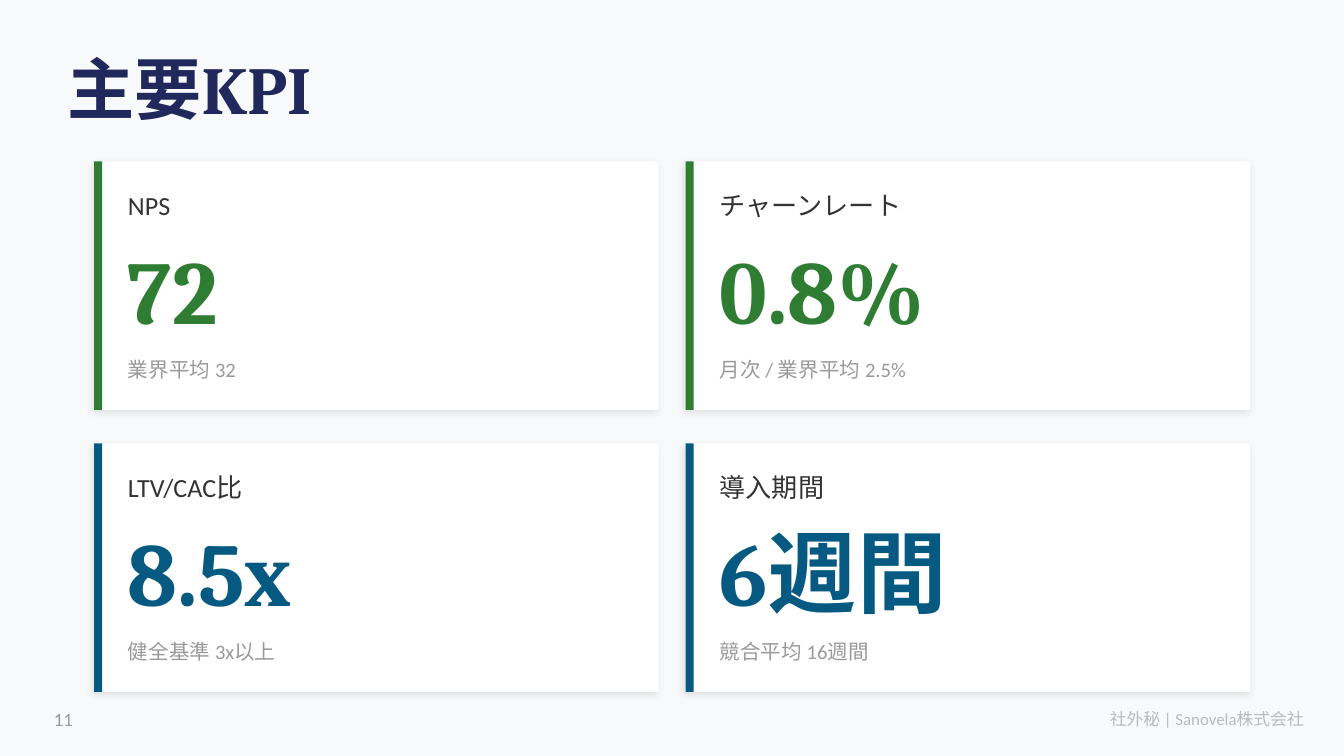
from lxml import etree
from pptx import Presentation
from pptx import util as u
from pptx.dml.color import RGBColor
from pptx.enum import shapes, text
from pptx.oxml.ns import qn

COLORS = {
    "background": "F8F9FA",
    "card": "FFFFFF",
    "shadow": "000000",
    "title": "21295C",
    "green": "2E7D32",
    "blue": "065A82",
    "label": "333333",
    "note": "999999",
    "footer": "BBBBBB",
}

KPIS = [
    ("NPS", "72", "業界平均 32", "green"),
    ("チャーンレート", "0.8%", "月次 / 業界平均 2.5%", "green"),
    ("LTV/CAC比", "8.5x", "健全基準 3x以上", "blue"),
    ("導入期間", "6週間", "競合平均 16週間", "blue"),
]

COLUMNS = 2
GRID_LEFT, GRID_TOP = 1.78, 3.05
CARD_WIDTH, CARD_HEIGHT = 10.67, 4.7
COLUMN_PITCH, ROW_PITCH = 11.18, 5.33
ACCENT_WIDTH = 0.15
TEXT_INSET, TEXT_WIDTH = 0.64, 9.65


def color(name):
    return RGBColor.from_string(COLORS[name])


def write(shape, content, size, font, color_name, bold=False, align=text.PP_ALIGN.LEFT):
    frame = shape.text_frame
    frame.word_wrap = True
    frame.auto_size = text.MSO_AUTO_SIZE.NONE
    frame.vertical_anchor = text.MSO_ANCHOR.MIDDLE
    frame.margin_left = frame.margin_right = frame.margin_top = frame.margin_bottom = 0
    paragraph = frame.paragraphs[0]
    paragraph.alignment = align
    run = paragraph.add_run()
    run.text = content
    run.font.size = u.Pt(size)
    run.font.name = font
    run.font.bold = bold
    run.font.color.rgb = color(color_name)


def add_text(slide, left, top, width, height, *content, **style):
    box = slide.shapes.add_textbox(u.Cm(left), u.Cm(top), u.Cm(width), u.Cm(height))
    write(box, *content, **style)


def add_rectangle(slide, left, top, width, height, color_name):
    rectangle = slide.shapes.add_shape(
        shapes.MSO_SHAPE.RECTANGLE, u.Cm(left), u.Cm(top), u.Cm(width), u.Cm(height)
    )
    rectangle.fill.solid()
    rectangle.fill.fore_color.rgb = color(color_name)
    rectangle.line.fill.background()
    rectangle.shadow.inherit = False
    return rectangle


def add_shadow(shape):
    effects = shape._element.spPr.find(qn("a:effectLst"))
    shadow = etree.SubElement(
        effects,
        qn("a:outerShdw"),
        blurRad=str(u.Pt(4)),
        dist=str(u.Pt(2)),
        dir=str(135 * 60000),
        algn="bl",
        rotWithShape="0",
    )
    tint = etree.SubElement(shadow, qn("a:srgbClr"), val=COLORS["shadow"])
    etree.SubElement(tint, qn("a:alpha"), val="10000")


def add_card(slide, left, top, label, value, note, accent):
    add_shadow(add_rectangle(slide, left, top, CARD_WIDTH, CARD_HEIGHT, "card"))
    add_rectangle(slide, left, top, ACCENT_WIDTH, CARD_HEIGHT, accent)
    text_left = left + TEXT_INSET
    add_text(slide, text_left, top + 0.38, TEXT_WIDTH, 0.89, label, 14, "Calibri", "label")
    add_text(slide, text_left, top + 1.27, TEXT_WIDTH, 2.29, value, 48, "Cambria", accent, bold=True)
    add_text(slide, text_left, top + 3.56, TEXT_WIDTH, 0.76, note, 11, "Calibri", "note")


def add_title(slide, content):
    title = slide.shapes.title
    title.left, title.top = u.Cm(1.27), u.Cm(0.76)
    title.width, title.height = u.Cm(22.86), u.Cm(1.78)
    write(title, content, 36, "Cambria", "title", bold=True)


def add_footer(slide, number, notice):
    add_text(slide, 1.02, 13.21, 1.27, 0.76, number, 10, "Calibri", "note")
    add_text(slide, 17.78, 13.21, 6.86, 0.76, notice, 9, "Calibri", "footer",
             align=text.PP_ALIGN.RIGHT)


def main():
    presentation = Presentation()
    presentation.slide_width = u.Cm(25.4)
    presentation.slide_height = u.Cm(14.29)
    slide = presentation.slides.add_slide(presentation.slide_layouts.get_by_name("Title Only"))
    slide.background.fill.solid()
    slide.background.fill.fore_color.rgb = color("background")
    add_title(slide, "主要KPI")
    for index, kpi in enumerate(KPIS):
        row, column = divmod(index, COLUMNS)
        add_card(slide, GRID_LEFT + column * COLUMN_PITCH, GRID_TOP + row * ROW_PITCH, *kpi)
    add_footer(slide, "11", "社外秘 | Sanovela株式会社")
    presentation.save("out.pptx")


if __name__ == "__main__":
    main()
